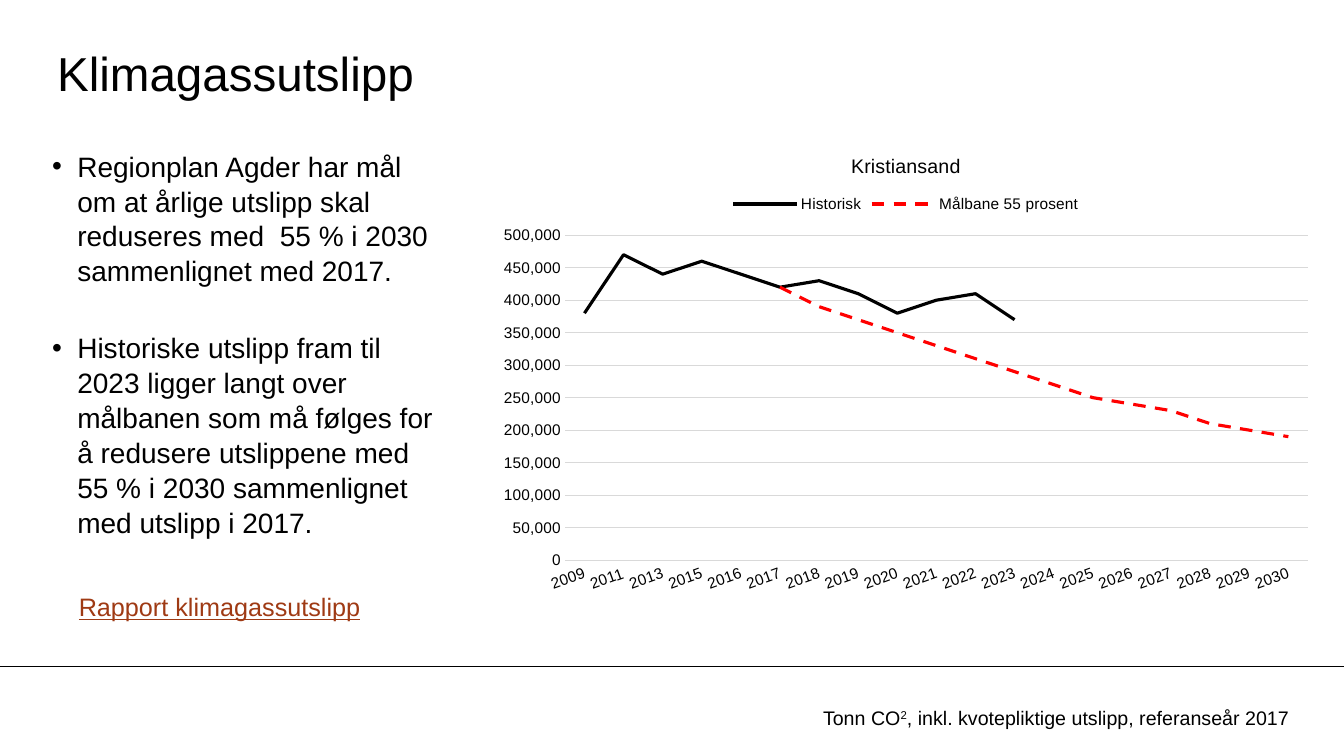
from dataclasses import dataclass

from lxml.etree import SubElement
from pptx import Presentation
from pptx.chart.data import CategoryChartData
from pptx.dml.color import RGBColor
from pptx.enum.chart import XL_CHART_TYPE as ChartType
from pptx.enum.chart import XL_LEGEND_POSITION as LegendPosition
from pptx.enum.chart import XL_TICK_MARK as TickMark
from pptx.enum.dml import MSO_LINE_DASH_STYLE as DashStyle
from pptx.enum.shapes import MSO_CONNECTOR as Connector
from pptx.enum.text import MSO_ANCHOR as Anchor
from pptx.enum.text import PP_ALIGN as Align
from pptx.oxml.ns import qn
from pptx.util import Inches, Pt


@dataclass(frozen=True)
class Theme:
    font: str = "Arial"
    text: RGBColor = RGBColor(0, 0, 0)
    link: RGBColor = RGBColor(0x9F, 0x3A, 0x14)
    target: RGBColor = RGBColor(0xFF, 0, 0)
    grid: RGBColor = RGBColor(0xD9, 0xD9, 0xD9)
    title_size: int = 34
    body_size: int = 20
    link_size: int = 18
    note_size: int = 14
    chart_title_size: int = 14
    axis_size: int = 11
    chart_size: int = 10


THEME = Theme()
WIDTH, HEIGHT = Inches(13.33), Inches(7.5)
COLUMNS, ROWS = 16, 9
TITLE_BOX = (0.68, 0.41, 13.32, 0.9)
BODY_BOX = (0.62, 1.76, 4.61, 4.98)
LINK_BOX = (0.82, 6.98, 3.79, 0.48)
CHART_BOX = (5.8, 1.61, 9.97, 5.56)
NOTE_BOX = (9.68, 8.34, 6.11, 0.41)
RULE_ROW = 7.94

BULLETS = (
    "Regionplan Agder har mål om at årlige utslipp skal reduseres med  55 % i 2030 "
    "sammenlignet med 2017.",
    "Historiske utslipp fram til 2023 ligger langt over målbanen som må følges for "
    "å redusere utslippene med 55 % i 2030 sammenlignet med utslipp i 2017.",
)
YEARS = [2009, 2011, 2013, *range(2015, 2031)]
HISTORIC = [380000, 470000, 440000, 460000, 440000, 420000,
            430000, 410000, 380000, 400000, 410000, 370000]
TARGET = [420000, 390000, 370000, 350000, 330000, 310000, 290000,
          270000, 250000, 240000, 230000, 210000, 200000, 190000]


def place(box):
    left, top, width, height = box
    return (int(left * WIDTH / COLUMNS), int(top * HEIGHT / ROWS),
            int(width * WIDTH / COLUMNS), int(height * HEIGHT / ROWS))


def style_font(font, size, color=THEME.text):
    font.name = THEME.font
    font.size = Pt(size)
    font.bold = False
    font.color.rgb = color


def add_run(paragraph, text, size, color=THEME.text):
    run = paragraph.add_run()
    run.text = text
    style_font(run.font, size, color)
    return run


def clear_margins(frame):
    frame.margin_left = frame.margin_right = 0
    frame.margin_top = frame.margin_bottom = 0


def add_frame(slide, box):
    frame = slide.shapes.add_textbox(*place(box)).text_frame
    frame.word_wrap = True
    return frame


def add_title(slide, box):
    title = slide.shapes.title
    title.left, title.top, title.width, title.height = place(box)
    frame = title.text_frame
    clear_margins(frame)
    frame.vertical_anchor = Anchor.MIDDLE
    paragraph = frame.paragraphs[0]
    paragraph.alignment = Align.LEFT
    add_run(paragraph, "Klimagassutslipp", THEME.title_size)


def add_bullets(slide, box):
    frame = add_frame(slide, box)
    clear_margins(frame)
    for index, text in enumerate(BULLETS):
        paragraph = frame.add_paragraph() if index else frame.paragraphs[0]
        paragraph.line_spacing = 1.04
        paragraph.space_before = Pt(30 if index else 0)
        properties = paragraph._p.get_or_add_pPr()
        properties.set("marL", str(Inches(0.25)))
        properties.set("indent", str(-Inches(0.25)))
        SubElement(properties, qn("a:buFont")).set("typeface", THEME.font)
        SubElement(properties, qn("a:buChar")).set("char", "•")
        add_run(paragraph, text, THEME.body_size)


def add_report_link(slide, box):
    paragraph = add_frame(slide, box).paragraphs[0]
    run = add_run(paragraph, "Rapport klimagassutslipp", THEME.link_size, THEME.link)
    run.font.underline = True


def add_unit_note(slide, box):
    paragraph = add_frame(slide, box).paragraphs[0]
    add_run(paragraph, "Tonn CO", THEME.note_size)
    exponent = add_run(paragraph, "2", THEME.note_size)
    exponent.font._element.set("baseline", "30000")
    add_run(paragraph, ", inkl. kvotepliktige utslipp, referanseår 2017", THEME.note_size)


def add_rule(slide, row):
    top = int(row * HEIGHT / ROWS)
    rule = slide.shapes.add_connector(Connector.STRAIGHT, 0, top, WIDTH, top)
    rule.line.color.rgb = THEME.text
    rule.line.width = Pt(0.75)
    SubElement(rule._element.spPr, qn("a:effectLst"))


def style_axis(axis, number_format):
    axis.major_tick_mark = axis.minor_tick_mark = TickMark.NONE
    labels = axis.tick_labels
    labels.number_format = number_format
    labels.number_format_is_linked = False
    style_font(labels.font, THEME.axis_size)


def style_hairline(line):
    line.color.rgb = THEME.grid
    line.width = Pt(0.75)


def add_emission_chart(slide, box):
    data = CategoryChartData(number_format="#,##0")
    data.categories = [str(year) for year in YEARS]
    data.add_series("Historisk", HISTORIC + [None] * (len(YEARS) - len(HISTORIC)))
    data.add_series("Målbane 55 prosent", [None] * (len(YEARS) - len(TARGET)) + TARGET)
    chart = slide.shapes.add_chart(ChartType.LINE, *place(box), data).chart
    style_font(chart.font, THEME.chart_size)

    chart.has_title = True
    add_run(chart.chart_title.text_frame.paragraphs[0], "Kristiansand",
            THEME.chart_title_size)
    chart.chart_title.include_in_layout = False
    chart.has_legend = True
    chart.legend.position = LegendPosition.TOP
    chart.legend.include_in_layout = False
    style_font(chart.legend.font, THEME.axis_size)

    years = chart.category_axis
    style_axis(years, "0")
    style_hairline(years.format.line)
    years._element.find(qn("c:txPr")).find(qn("a:bodyPr")).set("rot", "-1200000")
    tonnes = chart.value_axis
    style_axis(tonnes, "#,##0")
    tonnes.minimum_scale, tonnes.maximum_scale = 0, 500000
    tonnes.major_unit = 50000
    tonnes.format.line.fill.background()
    tonnes.has_major_gridlines = True
    style_hairline(tonnes.major_gridlines.format.line)

    plot = chart.plots[0]
    plot.vary_by_categories = False
    for series, color in zip(plot.series, (THEME.text, THEME.target)):
        series.smooth = False
        series.format.line.color.rgb = color
        series.format.line.width = Pt(2.25)
    plot.series[1].format.line.dash_style = DashStyle.DASH


def main():
    presentation = Presentation()
    presentation.slide_width, presentation.slide_height = WIDTH, HEIGHT
    slide = presentation.slides.add_slide(presentation.slide_layouts[5])
    add_rule(slide, RULE_ROW)
    add_title(slide, TITLE_BOX)
    add_bullets(slide, BODY_BOX)
    add_unit_note(slide, NOTE_BOX)
    add_report_link(slide, LINK_BOX)
    add_emission_chart(slide, CHART_BOX)
    presentation.save("out.pptx")


if __name__ == "__main__":
    main()
